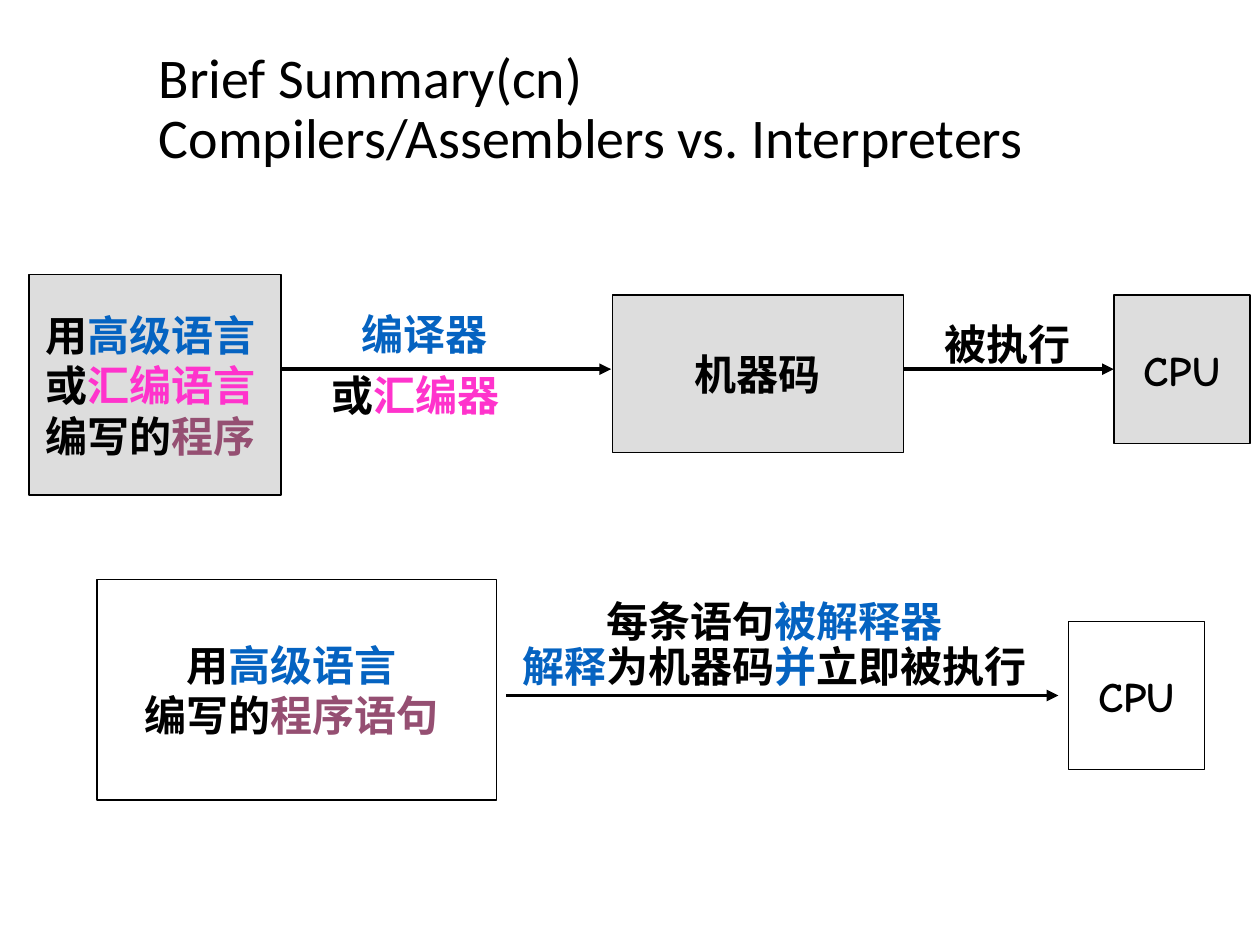
from lxml import etree
from pptx import Presentation
from pptx.dml.color import RGBColor
from pptx.enum.shapes import MSO_CONNECTOR, MSO_SHAPE
from pptx.enum.text import MSO_ANCHOR, MSO_AUTO_SIZE, PP_ALIGN
from pptx.oxml.ns import qn
from pptx.util import Inches, Pt

BLACK, BLUE, PINK, PURPLE, GREY = "000000", "0563C1", "FF33CC", "954F72", "DDDDDD"
CPU_SIZE = (1.08, 1.18)
HIGH_LEVEL = [("用", BLACK), ("高级语言 ", BLUE)]
CPU = [[("CPU", BLACK)]]


def rgb(value):
    return RGBColor.from_string(value)


def set_font(font, color, **values):
    for name, value in values.items():
        setattr(font, name, value)
    font.color.rgb = rgb(color)


def fill_text(tf, lines, align, spacing=None):
    """Each line is a list of (text, colour) runs."""
    for i, line in enumerate(lines):
        p = tf.paragraphs[0] if i == 0 else tf.add_paragraph()
        p.alignment = align
        if spacing:
            p.line_spacing = spacing
        for text, color in line:
            r = p.add_run()
            r.text = text
            set_font(r.font, color, name="Comic Neue", size=Pt(24), bold=True)


def add_box(s, left, top, size, lines, fill=None):
    sp = s.shapes.add_shape(MSO_SHAPE.RECTANGLE, Inches(left), Inches(top),
                            *map(Inches, size))
    sp.shadow.inherit = False
    if fill:
        sp.fill.solid()
        sp.fill.fore_color.rgb = rgb(fill)
    else:
        sp.fill.background()
    sp.line.color.rgb = rgb(BLACK)
    sp.line.width = Pt(0.75)
    tf = sp.text_frame
    tf.word_wrap = False
    tf.vertical_anchor = MSO_ANCHOR.MIDDLE
    fill_text(tf, lines, PP_ALIGN.CENTER)
    return sp


def add_label(s, left, top, size, lines, align=PP_ALIGN.LEFT, spacing=None, wrap=True):
    tf = s.shapes.add_textbox(Inches(left), Inches(top), *map(Inches, size)).text_frame
    tf.word_wrap = wrap
    tf.auto_size = MSO_AUTO_SIZE.SHAPE_TO_FIT_TEXT
    fill_text(tf, lines, align, spacing)


def add_arrow(s, x1, x2, y):
    arrow = s.shapes.add_connector(MSO_CONNECTOR.STRAIGHT, Inches(x1), Inches(y),
                                   Inches(x2), Inches(y))
    arrow.line.color.rgb = rgb(BLACK)
    arrow.line.width = Pt(2.25)
    etree.SubElement(arrow.line._get_or_add_ln(), qn("a:tailEnd"), type="triangle")
    etree.SubElement(arrow._element.spPr, qn("a:effectLst"))
    return arrow


def add_title(s, left, top, width, height):
    title = s.shapes.title
    title.left, title.top, title.width, title.height = map(
        Inches, (left, top, width, height))
    tf = title.text_frame
    tf.vertical_anchor = MSO_ANCHOR.MIDDLE
    p = tf.paragraphs[0]
    p.text = "Brief Summary(cn)\vCompilers/Assemblers vs. Interpreters"
    p.alignment = PP_ALIGN.LEFT
    p.line_spacing = 0.9
    set_font(p.font, BLACK, name="Calibri", size=Pt(32))
    for r in p.runs:
        set_font(r.font, BLACK, name="Calibri", size=Pt(32))


def add_compiler_row(s, left, top):
    arrow_y = top + 0.75
    # Program, CPU and the arrow that runs behind the machine code
    add_box(s, left, top, (2, 1.75), [
        HIGH_LEVEL,
        [("或", BLACK), ("汇编语言 ", PINK)],
        [("编写的", BLACK), ("程序 ", PURPLE)]], GREY)
    cpu = add_box(s, left + 8.61, top + 0.16, CPU_SIZE, CPU, GREY)
    run_arrow = add_arrow(s, left + 6, left + 8.61, arrow_y)
    run_arrow.end_connect(cpu, 1)
    add_arrow(s, left + 2, left + 4.62, arrow_y)
    add_box(s, left + 4.63, top + 0.16, (2.31, 1.25), [[("机器码", BLACK)]], GREY)
    # Arrow labels
    add_label(s, left + 2.54, top + 0.22, (1.68, 0.5), [[("编译器", BLUE)]])
    add_label(s, left + 2.3, top + 0.7, (2.79, 0.5), [[("或", BLACK), ("汇编器", PINK)]])
    add_label(s, left + 7.17, top + 0.22, (1.35, 0.58), [[("被执行", BLACK)]],
              spacing=1.2, wrap=False)


def add_interpreter_row(s, left, top):
    # Statements and CPU
    add_box(s, left, top, (3.17, 1.75), [
        HIGH_LEVEL, [("编写的", BLACK), ("程序语句 ", PURPLE)]])
    add_arrow(s, left + 3.25, left + 7.63, top + 0.92)
    add_box(s, left + 7.71, top + 0.33, CPU_SIZE, CPU)
    # Arrow label
    add_label(s, left + 3.16, top + 0.12, (4.44, 0.82), [
        [("每条语句", BLACK), ("被解释器", BLUE)],
        [("解释", BLUE), ("为机器码", BLACK), ("并", BLUE), ("立即被执行", BLACK)]],
        PP_ALIGN.CENTER, 0.9)


def main():
    prs = Presentation()
    prs.slide_width, prs.slide_height = Inches(10), Inches(7.5)
    s = prs.slides.add_slide(prs.slide_layouts[5])
    add_title(s, 1.16, 0.35, 8.74, 1.05)
    add_interpreter_row(s, 0.77, 4.6)
    add_compiler_row(s, 0.23, 2.18)
    prs.save("out.pptx")


if __name__ == "__main__":
    main()
